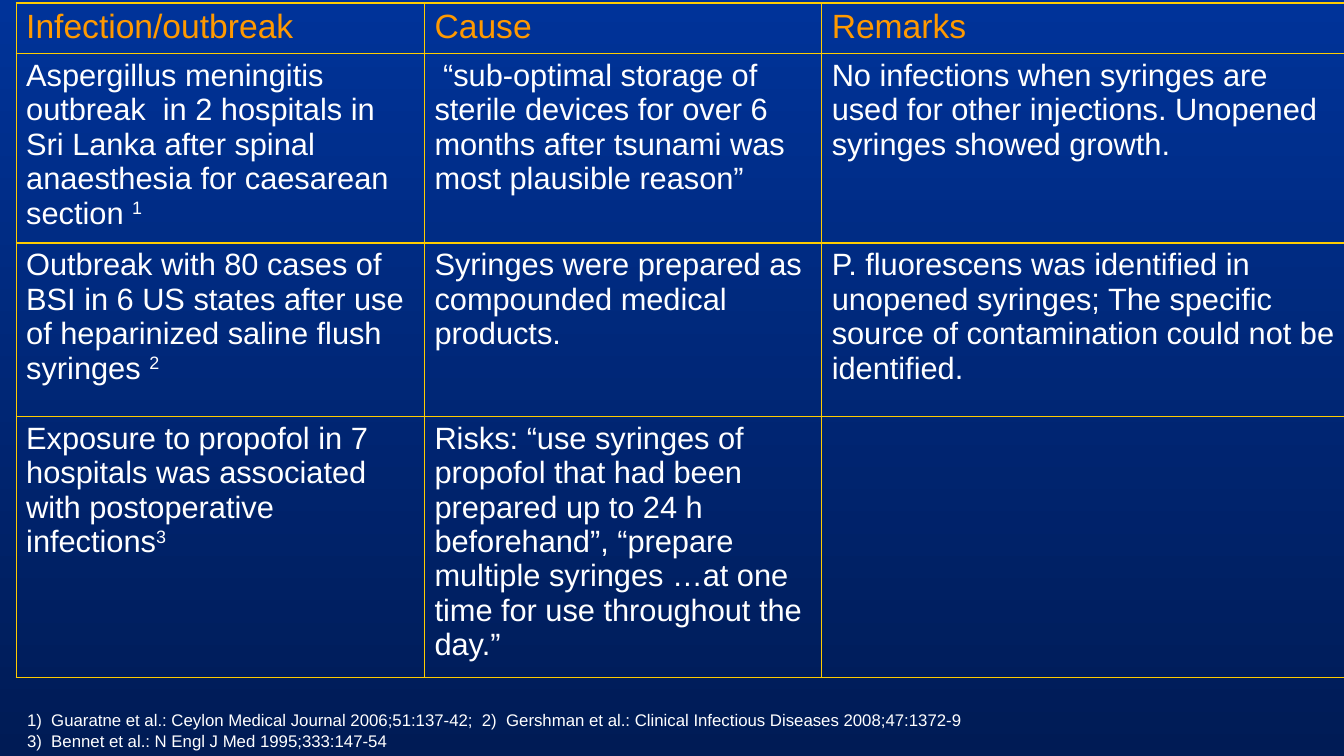
from pptx import Presentation
from pptx.dml.color import RGBColor
from pptx.oxml import parse_xml
from pptx.oxml.ns import nsdecls
from pptx.util import Inches, Pt

WHITE = RGBColor(0xFF, 0xFF, 0xFF)
ORANGE = RGBColor(0xFF, 0x99, 0x00)
GOLD = RGBColor(0xFF, 0xCC, 0x00)
BLUE = RGBColor(0x00, 0x33, 0x99)
NAVY = RGBColor(0x00, 0x1B, 0x55)


def add_run(p, text, size=22, color=WHITE, raised=False):
    r = p.add_run()
    r.text = text
    r.font.name = "Arial"
    r.font.size = Pt(size)
    r.font.color.rgb = color
    if raised:
        r.font._element.set("baseline", "30000")


def add_borders(cell):
    tcPr = cell._tc.get_or_add_tcPr()
    for i, side in enumerate(("lnL", "lnR", "lnT", "lnB")):
        tcPr.insert(i, parse_xml(
            f'<a:{side} {nsdecls("a")} w="12700"><a:solidFill>'
            f'<a:srgbClr val="{GOLD}"/></a:solidFill></a:{side}>'))


prs = Presentation()
prs.slide_width, prs.slide_height = Inches(13.33), Inches(7.5)
s = prs.slides.add_slide(prs.slide_layouts[6])

# Background, lighter at the top
bg = s.background.fill
bg.gradient()
bg.gradient_angle = 270
for stop, color, position in zip(bg.gradient_stops, (BLUE, NAVY), (0, 1)):
    stop.color.rgb = color
    stop.position = position

# Outbreak table: each cell is (text, reference number)
rows = [
    [("Infection/outbreak", ""), ("Cause", ""), ("Remarks", "")],
    [("Aspergillus meningitis outbreak  in 2 hospitals in Sri Lanka after "
      "spinal anaesthesia for caesarean section ", "1"),
     (" “sub-optimal storage of sterile devices for over 6 months after "
      "tsunami was most plausible reason”", ""),
     ("No infections when syringes are used for other injections. "
      "Unopened syringes showed growth.", "")],
    [("Outbreak with 80 cases of BSI in 6 US states after use of "
      "heparinized saline flush syringes ", "2"),
     ("Syringes were prepared as compounded medical products.", ""),
     ("P. fluorescens was identified in unopened syringes; The specific "
      "source of contamination could not be identified.", "")],
    [("Exposure to propofol in 7 hospitals was associated with "
      "postoperative infections", "3"),
     ("Risks: “use syringes of propofol that had been prepared up to 24 h "
      "beforehand”, “prepare multiple syringes …at one time for use "
      "throughout the day.”", ""),
     ("", "")],
]
widths = [4.05, 3.94, 5.19]
heights = [0.5, 1.88, 1.72, 2.59]
tbl = s.shapes.add_table(len(rows), len(widths), Inches(0.16), Inches(0.03),
                         Inches(sum(widths)), Inches(sum(heights))).table
tbl.first_row = tbl.horz_banding = False
for col, width in zip(tbl.columns, widths):
    col.width = Inches(width)
for i, (row, height) in enumerate(zip(rows, heights)):
    tbl.rows[i].height = Inches(height)
    for j, (text, ref) in enumerate(row):
        cell = tbl.cell(i, j)
        cell.fill.background()
        add_borders(cell)
        p = cell.text_frame.paragraphs[0]
        if text:
            add_run(p, text, size=22 if i else 24, color=WHITE if i else ORANGE)
        if ref:
            add_run(p, ref, raised=True)

# References
tf = s.shapes.add_textbox(Inches(0.17), Inches(6.99),
                          Inches(13.16), Inches(0.5)).text_frame
tf.word_wrap = True
p = tf.paragraphs[0]
add_run(p, "1)  Guaratne et al.: Ceylon Medical Journal 2006;51:137-42;  "
           "2)  Gershman et al.: Clinical Infectious Diseases 2008;47:1372-9", size=12)
p = tf.add_paragraph()
p.space_before = Pt(1)
add_run(p, "3)  Bennet et al.: N Engl J Med 1995;333:147-54", size=12)

prs.save("out.pptx")
